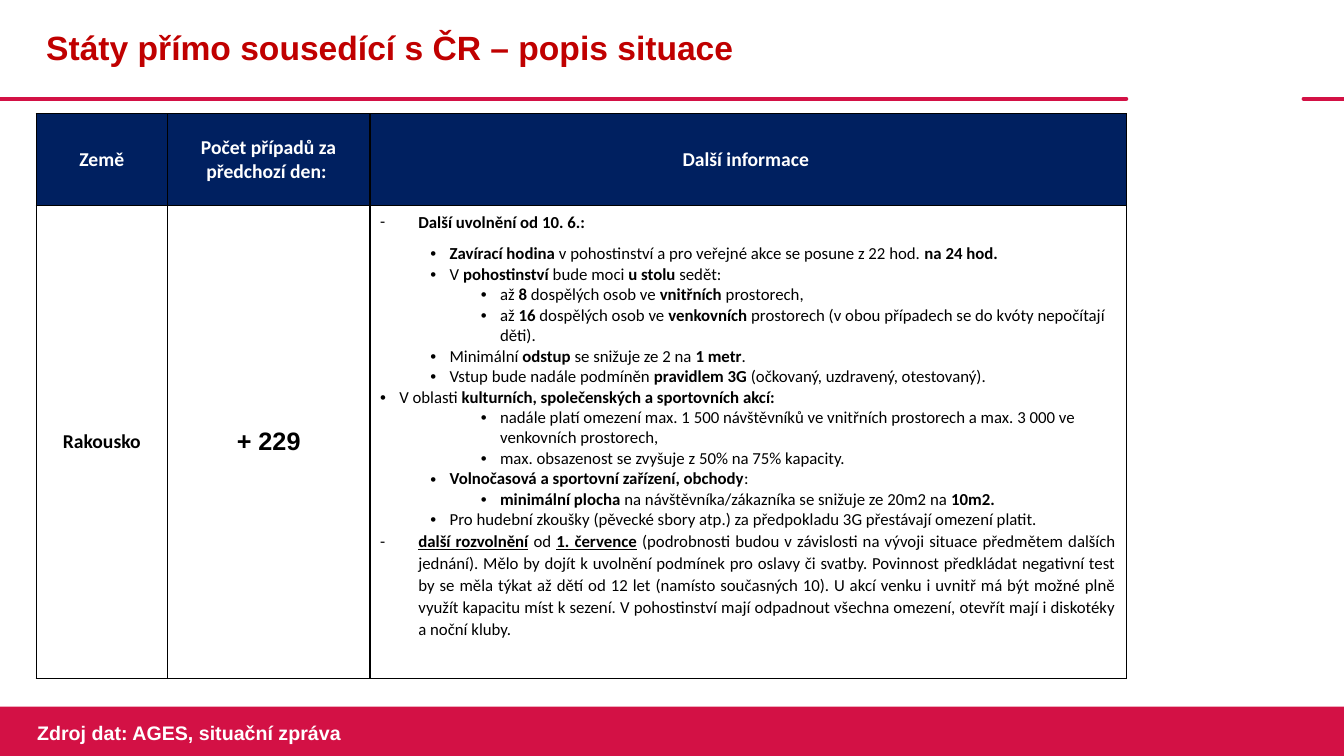
"""Build the slide on the situation in Austria, with a table of planned easing."""
from dataclasses import dataclass

from lxml.etree import SubElement as Sub
from pptx import Presentation as Deck
from pptx.dml.color import RGBColor as Rgb
from pptx.enum.shapes import MSO_CONNECTOR as Conn, MSO_SHAPE as Shape
from pptx.enum.text import MSO_ANCHOR as Anchor, PP_ALIGN as Align
from pptx.oxml.ns import qn
from pptx.util import Inches, Pt

HUES = {"red": "D31145", "title": "C00000", "navy": "002060",
        "white": "FFFFFF", "black": "000000"}


@dataclass(frozen=True)
class Run:
    text: str
    bold: bool = False
    line: bool = False


@dataclass(frozen=True)
class Style:
    size: int
    hue: str
    font: str = "Calibri"


@dataclass(frozen=True)
class Kind:
    level: int
    left: float
    hang: float
    mark: str = "•"
    wide: bool = False


@dataclass(frozen=True)
class Item:
    kind: Kind
    runs: tuple[Run, ...]


@dataclass(frozen=True)
class Cell:
    text: str
    style: Style
    fill: str = ""


def bold(text: str) -> Run:
    return Run(text, True)


def under(text: str) -> Run:
    return Run(text, True, True)


DASH = Kind(0, 0.38, 0.38, "-", True)
TOP = Kind(0, 0.19, 0.19)
MID = Kind(1, 0.69, 0.19)
LOW = Kind(2, 1.19, 0.19)

HEAD = Style(14, "white")
NAME = Style(14, "black")
COUNT = Style(18, "black", "Arial")
BODY = Style(12, "black")

CELLS = (
    (Cell("Země", HEAD, "navy"),
     Cell("Počet případů za předchozí den: ", HEAD, "navy"),
     Cell("Další informace ", HEAD, "navy")),
    (Cell("Rakousko", NAME), Cell("+ 229", COUNT), Cell("", BODY)),
)

ITEMS = (
    Item(DASH, (bold("Další uvolnění od 10. 6.:"),)),
    Item(MID, (bold("Zavírací hodina"),
               Run(" v pohostinství a pro veřejné akce se posune z 22 hod. "),
               bold("na 24 hod."))),
    Item(MID, (Run("V "), bold("pohostinství "), Run("bude moci "),
               bold("u stolu"), Run(" sedět:"))),
    Item(LOW, (Run("až"), bold(" 8"), Run(" dospělých osob ve "),
               bold("vnitřních "), Run("prostorech,"))),
    Item(LOW, (Run("až "), bold("16"), Run(" dospělých osob ve "),
               bold("venkovních "),
               Run("prostorech (v obou případech se do kvóty nepočítají děti)."))),
    Item(MID, (Run("Minimální "), bold("odstup"), Run(" se snižuje ze 2 na"),
               bold(" 1 metr"), Run("."))),
    Item(MID, (Run("Vstup bude nadále podmíněn "), bold("pravidlem 3G "),
               Run("(očkovaný, uzdravený, otestovaný)."))),
    Item(TOP, (Run("V oblasti "),
               bold("kulturních, společenských a sportovních akcí:"))),
    Item(LOW, (Run("nadále platí omezení max. 1 500 návštěvníků ve vnitřních "
                   "prostorech a max. 3 000 ve venkovních prostorech,"),)),
    Item(LOW, (Run("max. obsazenost se zvyšuje z 50% na 75% kapacity."),)),
    Item(MID, (bold("Volnočasová a sportovní zařízení, obchody"), Run(":"))),
    Item(LOW, (bold("minimální plocha"),
               Run(" na návštěvníka/zákazníka se snižuje ze 20m2 na"),
               bold(" 10m2."))),
    Item(MID, (Run("Pro hudební zkoušky (pěvecké sbory atp.) za předpokladu 3G "
                   "přestávají omezení platit."),)),
    Item(DASH, (under("další rozvolnění"), Run(" od "), under("1. července"),
                Run(" (podrobnosti budou v závislosti na vývoji situace předmětem "
                    "dalších jednání). Mělo by dojít k uvolnění podmínek pro oslavy "
                    "či svatby. Povinnost předkládat negativní test by se měla týkat "
                    "až dětí od 12 let (namísto současných 10). U akcí venku i uvnitř "
                    "má být možné plně využít kapacitu míst k sezení. V pohostinství "
                    "mají odpadnout všechna omezení, otevřít mají i diskotéky a noční "
                    "kluby."))),
)


def tint(hue: str) -> Rgb:
    return Rgb.from_string(HUES[hue])


def write(para, run: Run, style: Style) -> None:
    part = para.add_run()
    part.text = run.text
    font = part.font
    font.name, font.size = style.font, Pt(style.size)
    font.bold, font.underline = run.bold, run.line
    font.color.rgb = tint(style.hue)


def label(slide, box: tuple[float, ...], text: str, style: Style, wrap: bool):
    frame = slide.shapes.add_textbox(*map(Inches, box)).text_frame
    frame.word_wrap = wrap
    frame.vertical_anchor = Anchor.MIDDLE
    write(frame.paragraphs[0], bold(text), style)
    return frame


def rule(slide, start: float, end: float) -> None:
    line = slide.shapes.add_connector(
        Conn.STRAIGHT, Inches(start), Inches(0.98), Inches(end), Inches(0.98))
    line.line.color.rgb = tint("red")
    line.line.width = Pt(3)
    line.line._get_or_add_ln().set("cap", "rnd")
    Sub(line._element.spPr, qn("a:effectLst"))


def edge(cell) -> None:
    props = cell._tc.get_or_add_tcPr()
    for side in ("L", "R", "T", "B"):
        line = Sub(props, qn(f"a:ln{side}"), w=str(Pt(1)))
        fill = Sub(line, qn("a:solidFill"))
        Sub(fill, qn("a:srgbClr"), val=HUES["black"])


def bullet(para, item: Item) -> None:
    kind = item.kind
    para.level = kind.level
    props = para._p.get_or_add_pPr()
    props.set("marL", str(Inches(kind.left)))
    props.set("indent", str(-Inches(kind.hang)))
    Sub(props, qn("a:buFont"), typeface="Calibri" if kind.wide else "Arial")
    Sub(props, qn("a:buChar"), char=kind.mark)
    if kind.wide:
        para.alignment = Align.JUSTIFY
        para.line_spacing = 1.07
        para.space_after = Pt(8)
    for run in item.runs:
        write(para, run, BODY)


def grid(slide) -> None:
    table = slide.shapes.add_table(
        2, 3, *map(Inches, (0.36, 1.13, 10.81, 5.6))).table
    for col, width in zip(table.columns, (1.3, 2.01, 7.5)):
        col.width = Inches(width)
    for row, height in zip(table.rows, (0.91, 4.69)):
        row.height = Inches(height)
    for row, data in zip(table.rows, CELLS):
        for cell, item in zip(row.cells, data):
            edge(cell)
            if item.fill:
                cell.fill.solid()
                cell.fill.fore_color.rgb = tint(item.fill)
            else:
                cell.fill.background()
            if item.text:
                cell.vertical_anchor = Anchor.MIDDLE
                para = cell.text_frame.paragraphs[0]
                para.alignment = Align.CENTER
                write(para, bold(item.text), item.style)
    frame = table.cell(1, 2).text_frame
    for spot, item in enumerate(ITEMS):
        bullet(frame.add_paragraph() if spot else frame.paragraphs[0], item)


def main() -> None:
    deck = Deck()
    deck.slide_width, deck.slide_height = Inches(13.33), Inches(7.5)
    slide = deck.slides.add_slide(deck.slide_layouts[6])
    rule(slide, 0, 11.17)
    rule(slide, 12.93, 13.33)
    band = slide.shapes.add_shape(
        Shape.RECTANGLE, *map(Inches, (0, 7.01, 13.33, 0.49)))
    band.shadow.inherit = False
    band.fill.solid()
    band.fill.fore_color.rgb = tint("red")
    band.line.fill.background()
    title = label(slide, (0.36, 0, 10.81, 0.98),
                  "Státy přímo sousedící s ČR – popis situace",
                  Style(24, "title", "Arial"), True)
    title.paragraphs[0].line_spacing = 0.9
    grid(slide)
    label(slide, (0.27, 7.1, 3.28, 0.34), "Zdroj dat: AGES, situační zpráva",
          Style(14, "white", "Arial"), False)
    deck.save("out.pptx")


if __name__ == "__main__":
    main()
